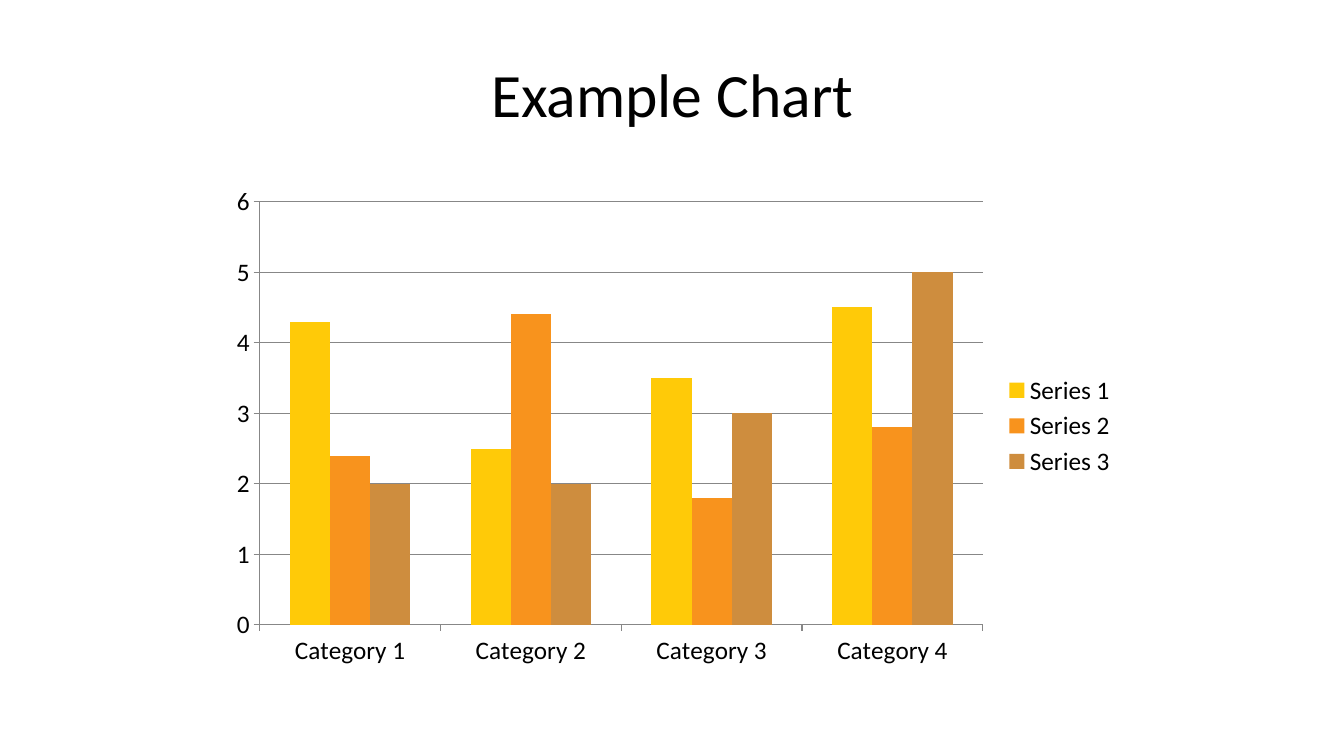
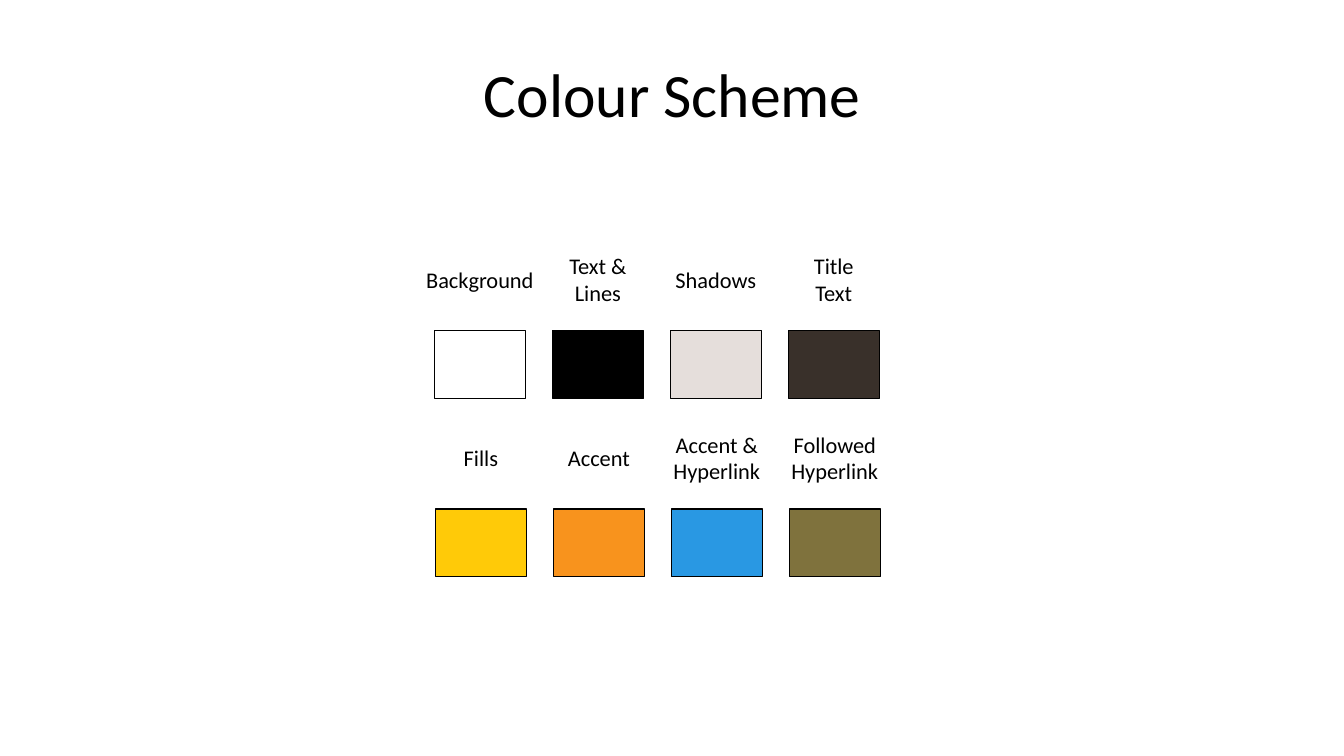
from pptx import Presentation
from pptx import util as u
from pptx.chart.data import CategoryChartData
from pptx.dml.color import RGBColor
from pptx.enum import chart as charts, shapes, text

FONT = "Calibri"
BLACK, WHITE, GREY = "000000", "FFFFFF", "878787"
YELLOW, ORANGE, BRONZE = "FFCA08", "F8931D", "CE8D3E"
TITLE_ONLY = 5


def color(value):
    return RGBColor.from_string(value)


def apply(target, values):
    for name, value in values.items():
        setattr(target, name, value)


def inches(*lengths):
    return [u.Inches(length) for length in lengths]


class Deck:
    """Holds the shared style and the current slide."""

    def __init__(self):
        self.deck = Presentation()
        self.deck.slide_width, self.deck.slide_height = inches(13.33, 7.5)
        self.page = None

    def style_font(self, font, size):
        apply(font, {"name": FONT, "size": u.Pt(size)})
        font.color.rgb = color(BLACK)

    def style_line(self, line, value):
        line.color.rgb = color(value)
        line.width = u.Pt(0.75)

    def fill_text(self, box, words, size):
        frame = box.text_frame
        frame.text = words
        frame.vertical_anchor = text.MSO_ANCHOR.MIDDLE
        for para in frame.paragraphs:
            para.alignment = text.PP_ALIGN.CENTER
            self.style_font(para.font, size)

    def add_page(self, title):
        self.page = self.deck.slides.add_slide(self.deck.slide_layouts[TITLE_ONLY])
        self.page.background.fill.solid()
        self.page.background.fill.fore_color.rgb = color(WHITE)
        box = self.page.shapes.title
        places = inches(0.67, 0.3, 12, 1.25)
        apply(box, dict(zip(("left", "top", "width", "height"), places)))
        self.fill_text(box, title, 44)

    def add_columns(self, place, categories, series):
        data = CategoryChartData()
        data.categories = categories
        for name, _, values in series:
            data.add_series(name, values)
        chart = self.page.shapes.add_chart(
            charts.XL_CHART_TYPE.COLUMN_CLUSTERED, *inches(*place), data).chart
        self.style_font(chart.font, 18)
        apply(chart, {"has_title": False, "has_legend": True})
        apply(chart.legend, {"position": charts.XL_LEGEND_POSITION.RIGHT,
                             "include_in_layout": False})

        # Columns
        plot = chart.plots[0]
        apply(plot, {"gap_width": 150, "overlap": 0, "vary_by_categories": False})
        for column, (_, fill, _) in zip(plot.series, series):
            column.format.fill.solid()
            column.format.fill.fore_color.rgb = color(fill)

        # Axes and gridlines
        for axis in (chart.category_axis, chart.value_axis):
            apply(axis, {"major_tick_mark": charts.XL_TICK_MARK.OUTSIDE,
                         "minor_tick_mark": charts.XL_TICK_MARK.NONE})
            self.style_line(axis.format.line, GREY)
        apply(chart.value_axis, {"minimum_scale": 0, "maximum_scale": 6,
                                 "major_unit": 1, "has_major_gridlines": True})
        self.style_line(chart.value_axis.major_gridlines.format.line, GREY)

    def add_swatch(self, place, fill):
        swatch = self.page.shapes.add_shape(
            shapes.MSO_SHAPE.RECTANGLE, *inches(*place))
        swatch.shadow.inherit = False
        swatch.fill.solid()
        swatch.fill.fore_color.rgb = color(fill)
        self.style_line(swatch.line, BLACK)

    def add_label(self, place, words):
        box = self.page.shapes.add_textbox(*inches(*place))
        box.text_frame.word_wrap = False
        self.fill_text(box, words, 16)


def chart_page(deck):
    deck.add_page("Example Chart")
    deck.add_columns(
        (2.17, 1.75, 9, 4.95),
        [f"Category {number}" for number in range(1, 5)],
        [("Series 1", YELLOW, (4.3, 2.5, 3.5, 4.5)),
         ("Series 2", ORANGE, (2.4, 4.4, 1.8, 2.8)),
         ("Series 3", BRONZE, (2, 2, 3, 5))])


def colour_page(deck):
    deck.add_page("Colour Scheme")
    rows = [
        [("Background", WHITE), ("Text &\nLines", BLACK),
         ("Shadows", "E5DEDB"), ("Title\nText", "39302A")],
        [("Fills", YELLOW), ("Accent", ORANGE),
         ("Accent &\nHyperlink", "2998E3"), ("Followed\nHyperlink", "7F723D")],
    ]
    # Each label is centred above its swatch
    width, height = 0.9, 0.67
    label_width, label_height, label_rise = 1.4, 0.64, 0.83
    for row, swatches in enumerate(rows):
        top = 3.28 + 1.77 * row
        for column, (words, fill) in enumerate(swatches):
            left = 4.31 + 0.01 * row + 1.17 * column
            deck.add_swatch((left, top, width, height), fill)
            deck.add_label((left + (width - label_width) / 2, top - label_rise,
                            label_width, label_height), words)


def main():
    deck = Deck()
    chart_page(deck)
    colour_page(deck)
    deck.deck.save("out.pptx")


if __name__ == "__main__":
    main()
